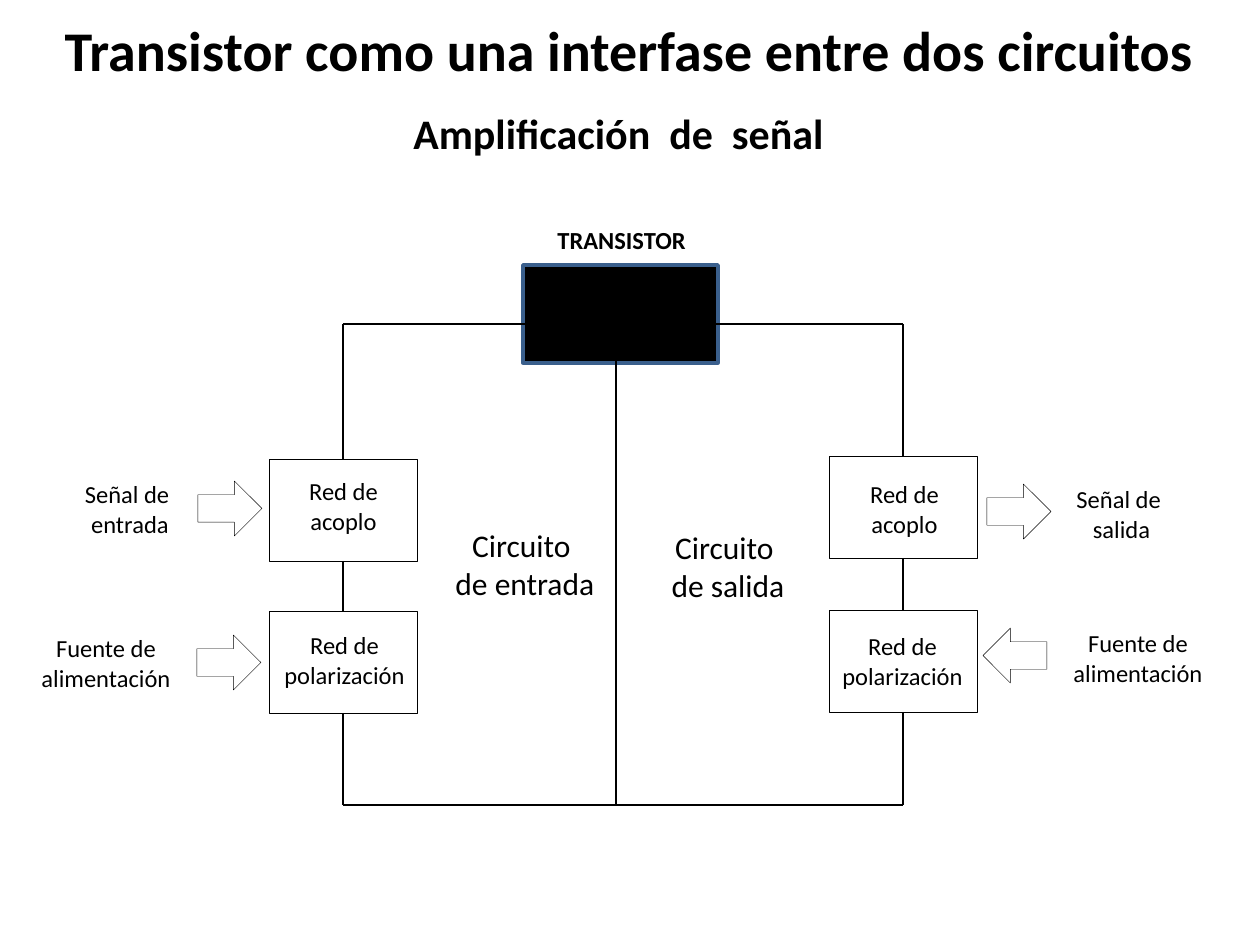
from lxml.etree import SubElement
from pptx import Presentation
from pptx.dml.color import RGBColor
from pptx.enum.shapes import MSO_CONNECTOR, MSO_SHAPE
from pptx.enum.text import MSO_ANCHOR, PP_ALIGN
from pptx.oxml.ns import qn
from pptx.util import Emu, Inches, Pt

BLACK = RGBColor(0x00, 0x00, 0x00)
BLUE = RGBColor(0x3A, 0x5F, 0x8C)
SCALE = Inches(1) / 126


def px(*values):
    return [Emu(round(value * SCALE)) for value in values]


def write_text(shape, text, size=14, bold=False, align=PP_ALIGN.CENTER):
    frame = shape.text_frame
    frame.word_wrap = False
    frame.vertical_anchor = MSO_ANCHOR.TOP
    frame.text = text
    for paragraph in frame.paragraphs:
        paragraph.alignment = align
        font = paragraph.runs[0].font
        font.name = "Calibri"
        font.size = Pt(size)
        font.bold = bold
        font.color.rgb = BLACK


presentation = Presentation()
presentation.slide_width = Inches(10)
presentation.slide_height = Inches(7.5)
slide = presentation.slides.add_slide(presentation.slide_layouts[5])
shapes = slide.shapes

title = shapes.title
title.left, title.top, title.width, title.height = px(52, 9, 1164, 81)
write_text(title, "Transistor como una interfase entre dos circuitos",
           size=32, bold=True, align=PP_ALIGN.LEFT)

transistor = shapes.add_shape(MSO_SHAPE.RECTANGLE, *px(523, 265, 195, 98))
transistor.shadow.inherit = False
transistor.fill.solid()
transistor.fill.fore_color.rgb = BLACK
transistor.line.color.rgb = BLUE
transistor.line.width = Pt(2)

outlines = [
    (MSO_SHAPE.RECTANGLE, 269, 459, 148, 102),
    (MSO_SHAPE.RECTANGLE, 269, 611, 148, 102),
    (MSO_SHAPE.RECTANGLE, 829, 456, 148, 102),
    (MSO_SHAPE.RECTANGLE, 829, 610, 148, 102),
    (MSO_SHAPE.RIGHT_ARROW, 198, 481, 64, 55),
    (MSO_SHAPE.RIGHT_ARROW, 197, 635, 64, 55),
    (MSO_SHAPE.RIGHT_ARROW, 987, 484, 64, 55),
    (MSO_SHAPE.LEFT_ARROW, 983, 628, 64, 55),
]
boxes = []
for kind, *bounds in outlines:
    shape = shapes.add_shape(kind, *px(*bounds))
    shape.shadow.inherit = False
    shape.fill.background()
    shape.line.color.rgb = BLACK
    shape.line.width = Pt(0.25)
    if kind == MSO_SHAPE.RECTANGLE:
        boxes.append(shape)
coupling_left, bias_left, coupling_right, bias_right = boxes

wires = [
    (616, 360, 616, 805, None, None),
    (343, 324, 716, 324, None, None),
    (903, 324, 530, 324, None, None),
    (343, 805, 903, 805, None, None),
    (343, 324, 343, 459, None, coupling_left),
    (343, 561, 343, 611, coupling_left, bias_left),
    (343, 713, 343, 805, bias_left, None),
    (903, 324, 903, 456, None, coupling_right),
    (903, 558, 903, 610, coupling_right, bias_right),
    (903, 712, 903, 805, bias_right, None),
]
for *ends, upper_box, lower_box in wires:
    wire = shapes.add_connector(MSO_CONNECTOR.STRAIGHT, *px(*ends))
    if upper_box:
        wire.begin_connect(upper_box, 2)
    if lower_box:
        wire.end_connect(lower_box, 0)
    wire.line.color.rgb = BLACK
    wire.line.width = Pt(0.75)
    SubElement(wire.element.spPr, qn("a:effectLst"))

labels = [
    ("Red de\nacoplo", 296, 470, 95, 72, {}),
    ("Red de\npolarización", 271, 624, 147, 72, {}),
    ("Red de\nacoplo", 857, 473, 95, 72, {}),
    ("Red de\npolarización", 829, 625, 147, 72, {}),
    ("Señal de \nentrada", 72, 473, 116, 72, {}),
    ("Fuente de\nalimentación", 28, 627, 156, 72, {}),
    ("Señal de \nsalida", 1061, 478, 121, 72, {}),
    ("Fuente de\nalimentación", 1060, 622, 156, 72, {}),
    ("Circuito \nde entrada", 442, 520, 166, 89, {"size": 18}),
    ("Circuito \nde salida", 658, 522, 140, 89, {"size": 18}),
    ("TRANSISTOR", 545, 219, 155, 43, {"bold": True, "align": PP_ALIGN.LEFT}),
    ("Amplificación  de  señal", 401, 101, 440, 63,
     {"size": 24, "bold": True, "align": PP_ALIGN.LEFT}),
]
for text, *bounds, text_format in labels:
    write_text(shapes.add_textbox(*px(*bounds)), text, **text_format)

presentation.save("out.pptx")
